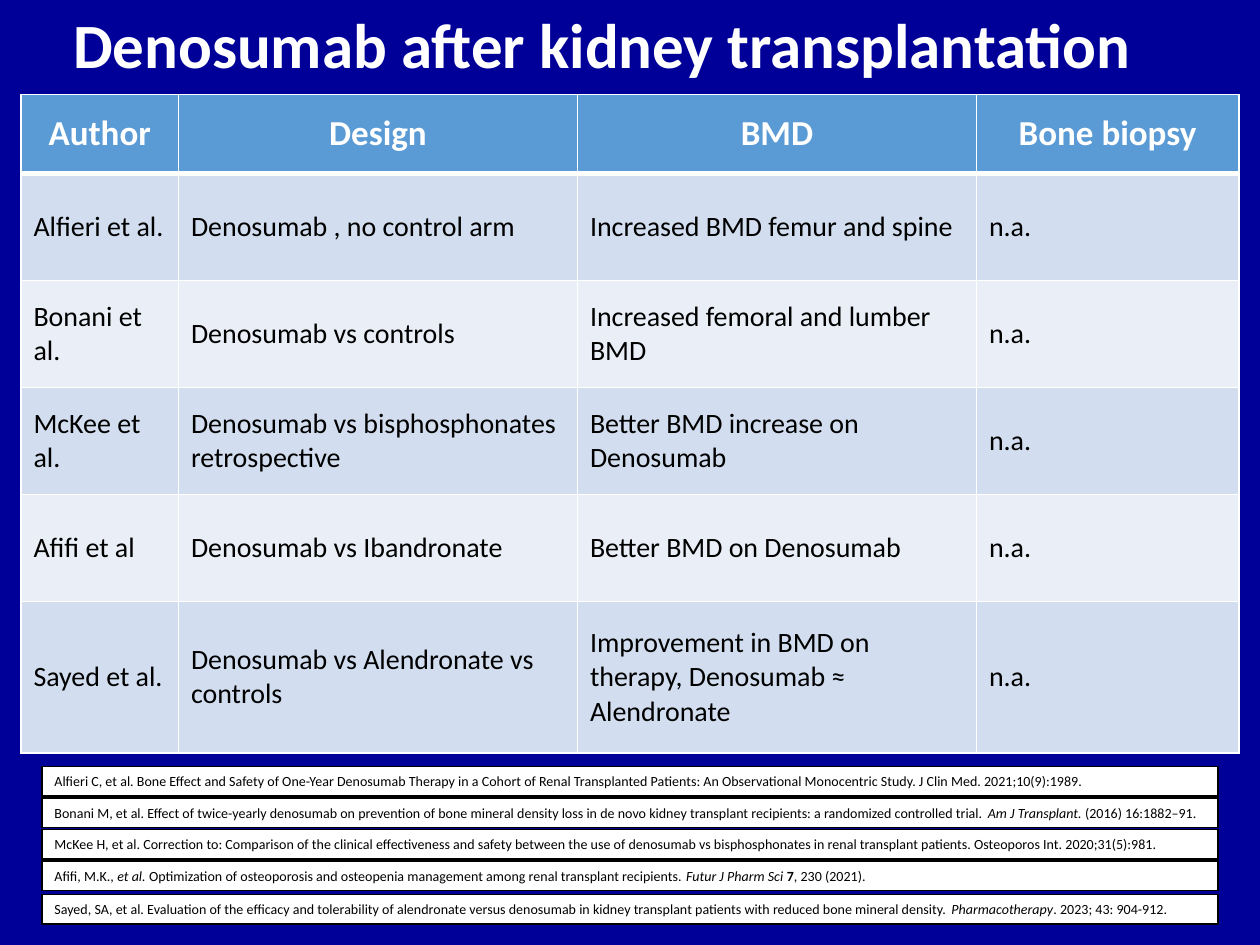
from lxml import etree
from pptx import Presentation
from pptx.dml.color import RGBColor
from pptx.enum.shapes import MSO_SHAPE
from pptx.enum.text import MSO_ANCHOR, MSO_AUTO_SIZE, PP_ALIGN
from pptx.oxml.ns import qn
from pptx.util import Inches, Pt

RECT = MSO_SHAPE.RECTANGLE
TOP, MIDDLE = MSO_ANCHOR.TOP, MSO_ANCHOR.MIDDLE
GROW = MSO_AUTO_SIZE.SHAPE_TO_FIT_TEXT
FIXED = MSO_AUTO_SIZE.NONE
LEFT, CENTER = PP_ALIGN.LEFT, PP_ALIGN.CENTER

NAVY = RGBColor(0x00, 0x00, 0x99)
WHITE = RGBColor(0xFF, 0xFF, 0xFF)
BLACK = RGBColor(0x00, 0x00, 0x00)
BLUE = RGBColor(0x5B, 0x9B, 0xD5)
BANDS = (RGBColor(0xEA, 0xEF, 0xF7), RGBColor(0xD2, 0xDE, 0xEF))

COLS = (15, 38, 38, 25)
ROWS = (7.5, 10.2, 10.2, 10.2, 10.2, 14.4)
STUDIES = [
    ("Author", "Design", "BMD", "Bone biopsy"),
    ("Alfieri et al.", "Denosumab , no control arm", "Increased BMD femur and spine", "n.a."),
    ("Bonani et al.", "Denosumab vs controls", "Increased femoral and lumber BMD", "n.a."),
    ("McKee et al.", "Denosumab vs bisphosphonates\nretrospective",
     "Better BMD increase on Denosumab", "n.a."),
    ("Afifi et al", "Denosumab vs Ibandronate", "Better BMD on Denosumab", "n.a."),
    ("Sayed et al.", "Denosumab vs Alendronate vs controls",
     "Improvement in BMD on therapy, Denosumab ≈ Alendronate", "n.a."),
]
SOURCES = [
    (73, [("Alfieri C, et al. Bone Effect and Safety of One-Year Denosumab Therapy in a Cohort of "
           "Renal Transplanted Patients: An Observational Monocentric Study. "
           "J Clin Med. 2021;10(9):1989.", "")]),
    (76, [("Bonani M, et al. Effect of twice-yearly denosumab on prevention of bone mineral density "
           "loss in de novo kidney transplant recipients: a randomized controlled trial. ", ""),
          ("Am J Transplant.", "i"), (" (2016) 16:1882–91.", "")]),
    (79, [("McKee H, et al. Correction to: Comparison of the clinical effectiveness and safety "
           "between the use of denosumab vs bisphosphonates in renal transplant patients. "
           "Osteoporos Int. 2020;31(5):981.", "")]),
    (82, [("Afifi, M.K., ", ""), ("et al.", "i"),
          (" Optimization of osteoporosis and osteopenia management among renal transplant "
           "recipients. ", ""),
          ("Futur J Pharm Sci ", "i"), ("7", "b"), (", 230 (2021).", "")]),
    (85.2, [("Sayed, SA, et al. Evaluation of the efficacy and tolerability of alendronate versus "
             "denosumab in kidney transplant patients with reduced bone mineral density. ", ""),
            ("Pharmacotherapy", "i"), (". 2023; 43: 904-912.", "")]),
]


class Deck:
    font = "Calibri"

    def __init__(self):
        self.file = Presentation()
        self.file.slide_width = Inches(10)
        self.file.slide_height = Inches(7.5)
        self.unit = self.file.slide_width / 120
        self.slide = self.file.slides.add_slide(self.file.slide_layouts[5])
        fill = self.slide.background.fill
        fill.solid()
        fill.fore_color.rgb = NAVY

    def span(self, *cells):
        return [round(cell * self.unit) for cell in cells]

    def text(self, para, runs, size, color, align=LEFT):
        para.alignment = align
        for words, style in runs:
            run = para.add_run()
            run.text = words
            font = run.font
            font.name, font.size = self.font, Pt(size)
            font.bold, font.italic = "b" in style, "i" in style
            font.color.rgb = color

    def title(self, words, *box):
        shape = self.slide.shapes.title
        shape.left, shape.top, shape.width, shape.height = self.span(*box)
        frame = shape.text_frame
        frame.word_wrap = True
        frame.auto_size = FIXED
        frame.vertical_anchor = MIDDLE
        para = frame.paragraphs[0]
        para.line_spacing = 0.9
        self.text(para, [(words, "b")], 36, WHITE, CENTER)

    def edge(self, cell, side, width):
        line = etree.SubElement(cell._tc.get_or_add_tcPr(), qn("a:ln" + side), w=str(Pt(width)))
        fill = etree.SubElement(line, qn("a:solidFill"))
        etree.SubElement(fill, qn("a:srgbClr"), val=str(WHITE))

    def cell(self, cell, words, row):
        head = row == 0
        for side in "LRTB":
            thick = (head and side == "B") or (row == 1 and side == "T")
            self.edge(cell, side, 3 if thick else 1)
        cell.fill.solid()
        cell.fill.fore_color.rgb = BLUE if head else BANDS[row % 2]
        cell.vertical_anchor = MIDDLE
        frame = cell.text_frame
        for num, part in enumerate(words.split("\n")):
            para = frame.add_paragraph() if num else frame.paragraphs[0]
            if head:
                self.text(para, [(part, "b")], 20, WHITE, CENTER)
            else:
                self.text(para, [(part, "")], 16, BLACK)

    def table(self, left, top, data):
        box = self.span(left, top, sum(COLS), sum(ROWS))
        table = self.slide.shapes.add_table(len(ROWS), len(COLS), *box).table
        table.horz_banding = False
        for col, width in zip(table.columns, self.span(*COLS)):
            col.width = width
        for row, height in zip(table.rows, self.span(*ROWS)):
            row.height = height
        for row, study in enumerate(data):
            for col, words in enumerate(study):
                self.cell(table.cell(row, col), words, row)

    def source(self, runs, *box):
        shape = self.slide.shapes.add_shape(RECT, *self.span(*box))
        shape.shadow.inherit = False
        shape.fill.solid()
        shape.fill.fore_color.rgb = WHITE
        shape.line.color.rgb = BLACK
        shape.line.width = Pt(0.75)
        frame = shape.text_frame
        frame.word_wrap = True
        frame.auto_size = GROW
        frame.vertical_anchor = TOP
        self.text(frame.paragraphs[0], runs, 8, BLACK)


def main():
    deck = Deck()
    deck.title("Denosumab after kidney transplantation", 3, 2, 108.7, 5.2)
    deck.table(2, 9, STUDIES)
    for top, runs in SOURCES:
        deck.source(runs, 4, top, 112, 2.8)
    deck.file.save("out.pptx")


if __name__ == "__main__":
    main()
